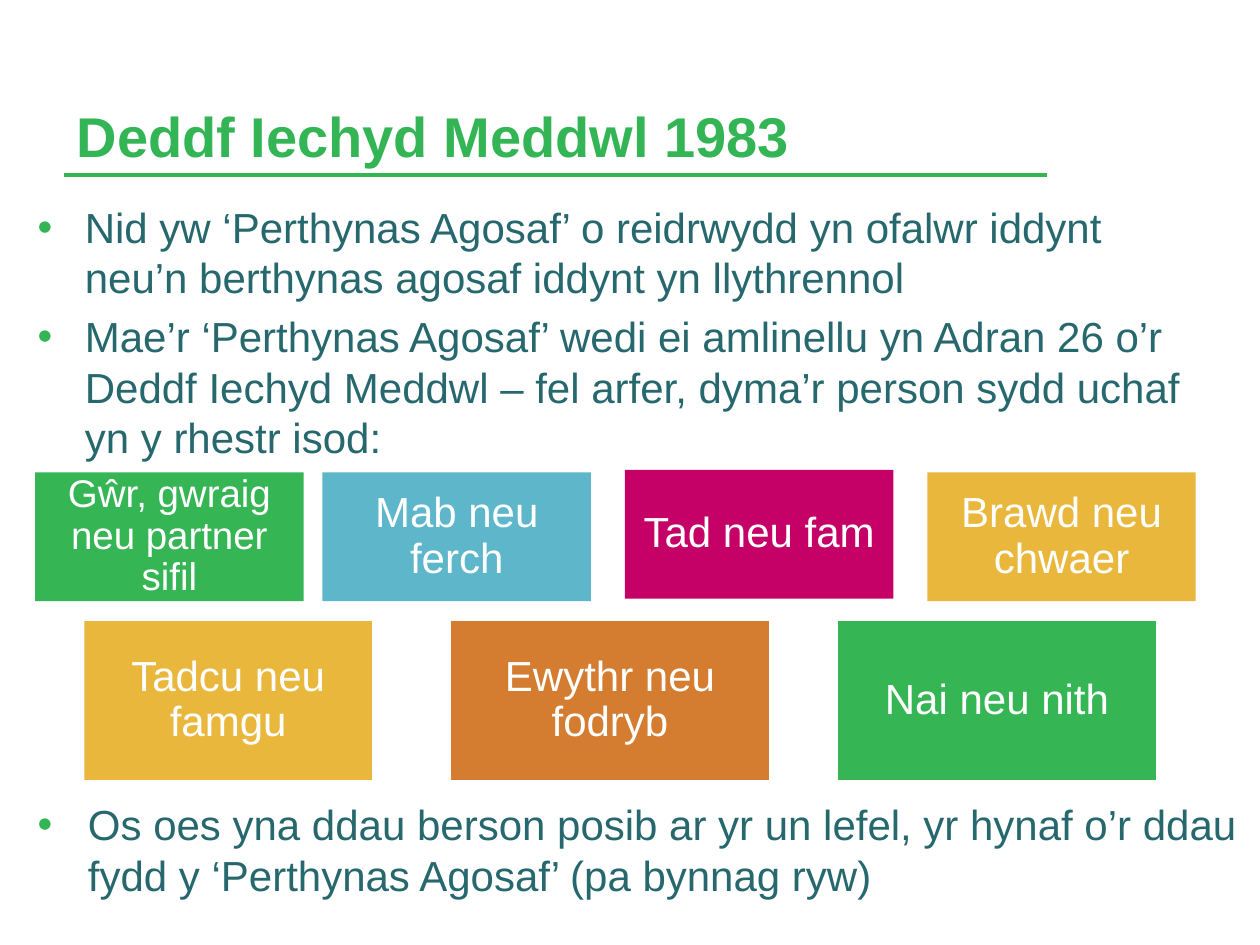
import pptx
import pptx.util
import pptx.dml.color
import pptx.enum.shapes
import pptx.enum.text
import pptx.oxml.ns
import lxml.etree

Pt = pptx.util.Pt
ALIGN = pptx.enum.text.PP_ALIGN
ANCHOR = pptx.enum.text.MSO_ANCHOR
qn = pptx.oxml.ns.qn

GREEN, TEAL, WHITE = "34B555", "26686D", "FFFFFF"
LEAF, BLUE, PINK, GOLD, RUST = "36B555", "5DB6C9", "C50067", "E9B73C", "D47C30"

RULES = [
    "Nid yw ‘Perthynas Agosaf’ o reidrwydd yn ofalwr iddynt neu’n berthynas agosaf iddynt yn llythrennol",
    "Mae’r ‘Perthynas Agosaf’ wedi ei amlinellu yn Adran 26 o’r Deddf Iechyd Meddwl – fel arfer, "
    "dyma’r person sydd uchaf yn y rhestr isod:",
]
NOTE = ["Os oes yna ddau berson posib ar yr un lefel, yr hynaf o’r ddau "
        "fydd y ‘Perthynas Agosaf’ (pa bynnag ryw)"]

# Each tile: left, top and width within its row, text, fill, text size
NEAR = [
    (0, 1.5, 153.4, "Gŵr, gwraig neu partner sifil", LEAF, 22),
    (164.2, 1.5, 153.4, "Mab neu ferch", BLUE, 24),
    (337, 0, 153.4, "Tad neu fam", PINK, 24),
    (509.8, 1.5, 153.4, "Brawd neu chwaer", GOLD, 24),
]
FAR = [
    (0, 0, 164.4, "Tadcu neu famgu", GOLD, 24),
    (209.6, 0, 181.6, "Ewythr neu fodryb", RUST, 24),
    (430.7, 0, 181.6, "Nai neu nith", LEAF, 24),
]


def tint(code):
    return pptx.dml.color.RGBColor.from_string(code)


def apply(thing, style):
    for name, value in style.items():
        setattr(thing, name, value)


def write(para, text, size, color, bold=False):
    run = para.add_run()
    run.text = text
    apply(run.font, {"name": "Arial", "size": Pt(size), "bold": bold})
    run.font.color.rgb = tint(color)


def text_box(slide, box, anchor):
    frame = slide.shapes.add_textbox(*map(Pt, box)).text_frame
    apply(frame, {"word_wrap": True, "vertical_anchor": anchor})
    return frame


def bullet(para, indent, hang):
    props = para._p.get_or_add_pPr()
    props.set("marL", str(Pt(indent)))
    props.set("indent", str(-Pt(hang)))
    color = lxml.etree.SubElement(props, qn("a:buClr"))
    lxml.etree.SubElement(color, qn("a:srgbClr"), val=GREEN)
    lxml.etree.SubElement(props, qn("a:buFont"), typeface="Arial")
    lxml.etree.SubElement(props, qn("a:buChar"), char="•")


def title(slide, box, text):
    left, top, width, height = box
    # Rule under the title
    base = top + height
    line = slide.shapes.add_connector(
        pptx.enum.shapes.MSO_CONNECTOR.STRAIGHT,
        Pt(left), Pt(base), Pt(left + width), Pt(base))
    line.line.color.rgb = tint(GREEN)
    line.line.width = Pt(2)
    lxml.etree.SubElement(line._element.spPr, qn("a:effectLst"))
    # Title text
    frame = text_box(slide, box, ANCHOR.BOTTOM)
    write(frame.paragraphs[0], text, 32, GREEN, True)


def points(slide, box, items, indent, hang):
    frame = text_box(slide, box, ANCHOR.TOP)
    for i, item in enumerate(items):
        para = frame.add_paragraph() if i else frame.paragraphs[0]
        bullet(para, indent, hang)
        if i:
            para.space_before = Pt(4.8)
        write(para, item, 24, TEAL)


def tiles(slide, box, items):
    left, top, height = box
    for x, y, width, text, fill, size in items:
        tile = slide.shapes.add_shape(
            pptx.enum.shapes.MSO_SHAPE.RECTANGLE,
            Pt(left + x), Pt(top + y), Pt(width), Pt(height))
        tile.shadow.inherit = False
        tile.fill.solid()
        tile.fill.fore_color.rgb = tint(fill)
        tile.line.fill.background()
        frame = tile.text_frame
        apply(frame, {"word_wrap": True, "vertical_anchor": ANCHOR.MIDDLE})
        sides = ("left", "top", "right", "bottom")
        apply(frame, {"margin_" + side: Pt(7.2) for side in sides})
        para = frame.paragraphs[0]
        apply(para, {"alignment": ALIGN.CENTER, "line_spacing": 0.9})
        write(para, text, size, WHITE)


def main():
    deck = pptx.Presentation()
    apply(deck, {"slide_width": Pt(720), "slide_height": Pt(540)})
    slide = deck.slides.add_slide(deck.slide_layouts[6])
    title(slide, (36.7, 21, 561.6, 79), "Deddf Iechyd Meddwl 1983")
    points(slide, (14.4, 111.6, 686.2, 158.4), RULES, 27, 27)
    points(slide, (0, 453, 720, 87), NOTE, 43.2, 28.8)
    tiles(slide, (20.1, 268.5, 73.6), NEAR)
    tiles(slide, (48.2, 355, 90.7), FAR)
    deck.save("out.pptx")


if __name__ == "__main__":
    main()
